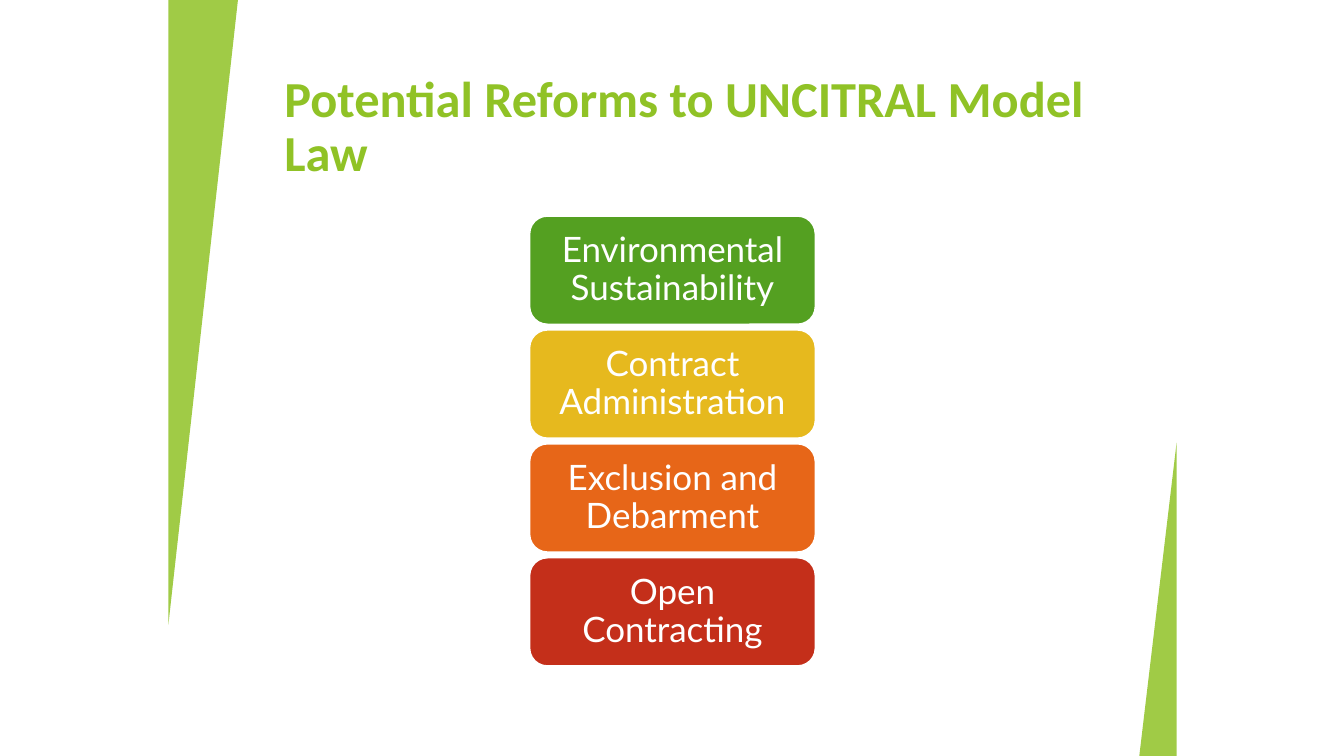
from pptx import Presentation
from pptx.dml.color import RGBColor
from pptx.enum.shapes import MSO_SHAPE
from pptx.enum.text import MSO_ANCHOR, MSO_AUTO_SIZE, PP_ALIGN
from pptx.oxml.ns import qn
from pptx.util import Inches, Pt
from lxml import etree

TRIANGLE = MSO_SHAPE.ISOSCELES_TRIANGLE
ROUNDED = MSO_SHAPE.ROUNDED_RECTANGLE
MIDDLE = MSO_ANCHOR.MIDDLE
NO_AUTOFIT = MSO_AUTO_SIZE.NONE
LEFT, CENTER = PP_ALIGN.LEFT, PP_ALIGN.CENTER

GREEN, WHITE = "90C226", "FFFFFF"
REFORMS = [
    ("Environmental Sustainability", "54A021"),
    ("Contract Administration", "E6B91E"),
    ("Exclusion and Debarment", "E76618"),
    ("Open Contracting", "C42F1A"),
]
FIRST_TOP, PITCH = 2.14, 1.13


def color(hex_value):
    return RGBColor.from_string(hex_value)


def apply(target, values):
    for name, value in values.items():
        setattr(target, name, value)


class ReformSlide:
    title_font = {"name": "Calibri", "size": Pt(36), "bold": True}
    card_font = {"name": "Lato", "size": Pt(25), "bold": False}
    title_frame = {"word_wrap": True, "auto_size": NO_AUTOFIT, "vertical_anchor": MIDDLE}
    card_frame = title_frame | {
        "margin_left": Inches(0.15), "margin_right": Inches(0.15),
        "margin_top": Inches(0.1), "margin_bottom": Inches(0.1),
    }
    title_paragraph = {"alignment": LEFT, "line_spacing": 0.9}
    card_paragraph = {"alignment": CENTER, "line_spacing": 0.9, "space_after": Pt(8.75)}

    def __init__(self, deck):
        self.slide = deck.slides.add_slide(deck.slide_layouts[5])

    def label(self, holder, wording, frame, paragraph, font, ink):
        holder.text_frame.text = wording
        apply(holder.text_frame, frame)
        line = holder.text_frame.paragraphs[0]
        apply(line, paragraph)
        apply(line.runs[0].font, font)
        line.runs[0].font.color.rgb = color(ink)

    def title(self, wording, left, top, width, height):
        heading = self.slide.shapes.title
        apply(heading, {"left": Inches(left), "top": Inches(top),
                        "width": Inches(width), "height": Inches(height)})
        self.label(heading, wording, self.title_frame, self.title_paragraph,
                   self.title_font, GREEN)

    def shape(self, preset, fill, left, top, width, height):
        figure = self.slide.shapes.add_shape(
            preset, Inches(left), Inches(top), Inches(width), Inches(height))
        figure.shadow.inherit = False
        figure.fill.solid()
        figure.fill.fore_color.rgb = color(fill)
        return figure

    def wedge(self, left, top, width, height, rotation=0):
        edge = self.shape(TRIANGLE, GREEN, left, top, width, height)
        edge.adjustments[0] = 1
        edge.rotation = rotation
        edge.line.fill.background()
        tint = edge.element.spPr.find(qn("a:solidFill"))[0]
        etree.SubElement(tint, qn("a:alpha"), val="85000")

    def card(self, wording, fill, top):
        reform = self.shape(ROUNDED, fill, 5.25, top, 2.84, 1.08)
        reform.line.color.rgb = color(WHITE)
        reform.line.width = Pt(1.5)
        self.label(reform, wording, self.card_frame, self.card_paragraph,
                   self.card_font, WHITE)


def main():
    deck = Presentation()
    deck.slide_width, deck.slide_height = Inches(13.33), Inches(7.5)
    page = ReformSlide(deck)
    page.title("Potential Reforms to UNCITRAL Model Law", 2.72, 0.67, 8.36, 1.2)
    page.wedge(1.67, 0, 0.69, 6.2, rotation=180)
    page.wedge(11.3, 4.39, 0.37, 3.11)
    for row, (reform, fill) in enumerate(REFORMS):
        page.card(reform, fill, FIRST_TOP + row * PITCH)
    deck.save("out.pptx")


if __name__ == "__main__":
    main()
